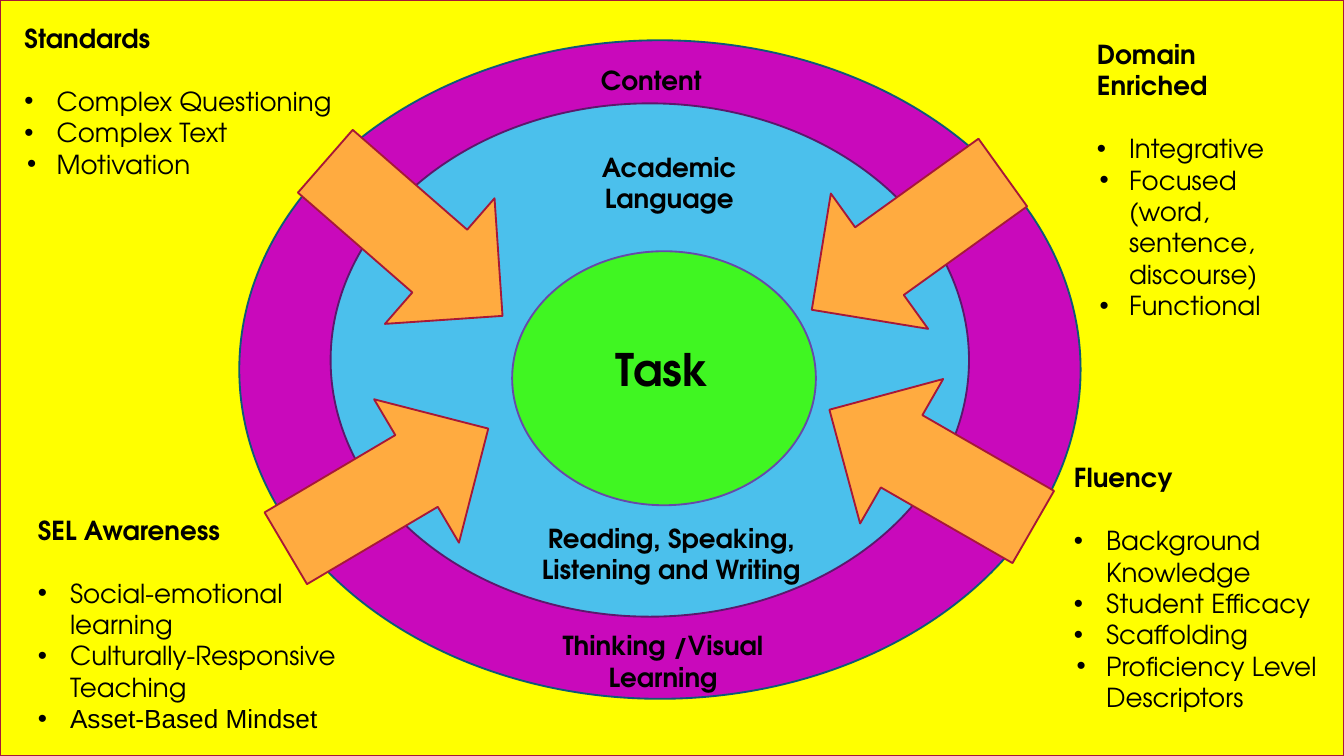
from pptx import Presentation
from pptx.dml.color import RGBColor
from pptx.enum.shapes import MSO_SHAPE
from pptx.enum.text import MSO_ANCHOR, PP_ALIGN
from pptx.oxml.ns import qn
from pptx.util import Pt
from lxml import etree

RECT, OVAL, ARROW = MSO_SHAPE.RECTANGLE, MSO_SHAPE.OVAL, MSO_SHAPE.UP_ARROW
TOP = MSO_ANCHOR.TOP
LEFT, MID = PP_ALIGN.LEFT, PP_ALIGN.CENTER
FONT = "TeX Gyre Adventor"
WIDE, NEAR = 17.2, 15.8

RINGS = [
    (0, 0, 450.7, 352.8, "C909BB", "0D5A77"),
    (48.9, 33.8, 342, 275, "4BC0EC", "5C186C"),
    (146.2, 113, 162.7, 136.1, "40F622", "6649AA"),
]
LABELS = [
    ("Content", 188.6, 10.1, 103.7, 21.6, 14, LEFT),
    ("Thinking /Visual Learning", 164.8, 313.2, 124.6, 21.6, 14, MID),
    ("Academic Language", 178.5, 56.9, 103.7, 38.2, 14, MID),
    ("Reading, Speaking, Listening and Writing", 154.8, 255.6, 153.4, 38.2, 14, MID),
    ("Task", 183.6, 159.1, 85.7, 34.6, 24, MID),
]
ARROWS = [
    (326.1, 166.3, 299.9),
    (34.5, 177.1, 59.4),
    (48.9, 43.2, 131.1),
    (313.2, 44.6, 234.3),
]
LISTS = [
    ((7.9, 9.4, 181.4, 120.2), "Standards", [
        ("Complex Questioning", WIDE, FONT),
        ("Complex Text", WIDE, FONT),
        ("Motivation", NEAR, FONT)]),
    ((582.5, 18, 105.1, 234.7), "Domain Enriched", [
        ("Integrative", WIDE, FONT),
        ("Focused (word, sentence, discourse)", NEAR, FONT),
        ("Functional", NEAR, FONT)]),
    ((15.1, 272.9, 181.4, 185), "SEL Awareness", [
        ("Social-emotional learning", WIDE, FONT),
        ("Culturally-Responsive Teaching", WIDE, FONT),
        ("Asset-Based Mindset", WIDE, "Arial")]),
    ((570.2, 244.8, 153.4, 234.7), "Fluency", [
        ("Background Knowledge", WIDE, FONT),
        ("Student Efficacy", WIDE, FONT),
        ("Scaffolding", WIDE, FONT),
        ("Proficiency Level Descriptors", NEAR, FONT)]),
]


def color(code):
    """Turn a hex string into a colour."""
    return RGBColor.from_string(code)


def shape(slide, kind, box, fill, line, turn=0):
    """Add a filled and outlined preset shape."""
    item = slide.shapes.add_shape(kind, *map(Pt, box))
    item.shadow.inherit = False
    item.fill.solid()
    item.fill.fore_color.rgb = color(fill)
    item.line.color.rgb = color(line)
    item.line.width = Pt(1)
    item.rotation = turn


def frame(slide, box):
    """Add a wrapping text box and return its frame."""
    text = slide.shapes.add_textbox(*map(Pt, box)).text_frame
    text.word_wrap = True
    text.vertical_anchor = TOP
    text.margin_left = text.margin_right = Pt(5.2)
    text.margin_top = text.margin_bottom = Pt(2.6)
    return text


def style(para, size=14, bold=True, face=FONT):
    """Format the runs of a paragraph."""
    for run in para.runs:
        run.font.size = Pt(size)
        run.font.bold = bold
        run.font.name = face
        run.font.color.rgb = color("000000")


def bullet(para, hang):
    """Give a paragraph a black bullet and a hanging indent."""
    props = para._p.get_or_add_pPr()
    props.set("marL", str(Pt(WIDE)))
    props.set("indent", str(-Pt(hang)))
    tint = etree.SubElement(props, qn("a:buClr"))
    etree.SubElement(tint, qn("a:srgbClr"), val="000000")
    etree.SubElement(props, qn("a:buFont"), typeface="Arial")
    etree.SubElement(props, qn("a:buChar"), char="•")


def topic(slide, box, title, items):
    """Place a bold heading with its bullet list."""
    text = frame(slide, box)
    head = text.paragraphs[0]
    head.text = title
    head.space_after = Pt(16.8)
    style(head)
    for words, hang, face in items:
        para = text.add_paragraph()
        para.text = words
        bullet(para, hang)
        style(para, bold=False, face=face)


def target(slide, left, top):
    """Place the nested rings, their labels and the inward arrows."""
    for x, y, wide, high, fill, line in RINGS:
        shape(slide, OVAL, (left + x, top + y, wide, high), fill, line)
    for words, x, y, wide, high, size, align in LABELS:
        para = frame(slide, (left + x, top + y, wide, high)).paragraphs[0]
        para.text = words
        para.alignment = align
        style(para, size)
    for x, y, turn in ARROWS:
        box = (left + x, top + y, 89.3, 126)
        shape(slide, ARROW, box, "FFAB40", "A71838", turn)


def main():
    """Build the slide and save it."""
    deck = Presentation()
    deck.slide_width, deck.slide_height = Pt(720), Pt(405)
    slide = deck.slides.add_slide(deck.slide_layouts[6])
    slide.background.fill.solid()
    slide.background.fill.fore_color.rgb = color("FFE599")
    shape(slide, RECT, (0, 0, 720, 405), "FFFF00", "A71838")
    target(slide, 128.2, 21.6)
    for box, title, items in LISTS:
        topic(slide, box, title, items)
    deck.save("out.pptx")


if __name__ == "__main__":
    main()
